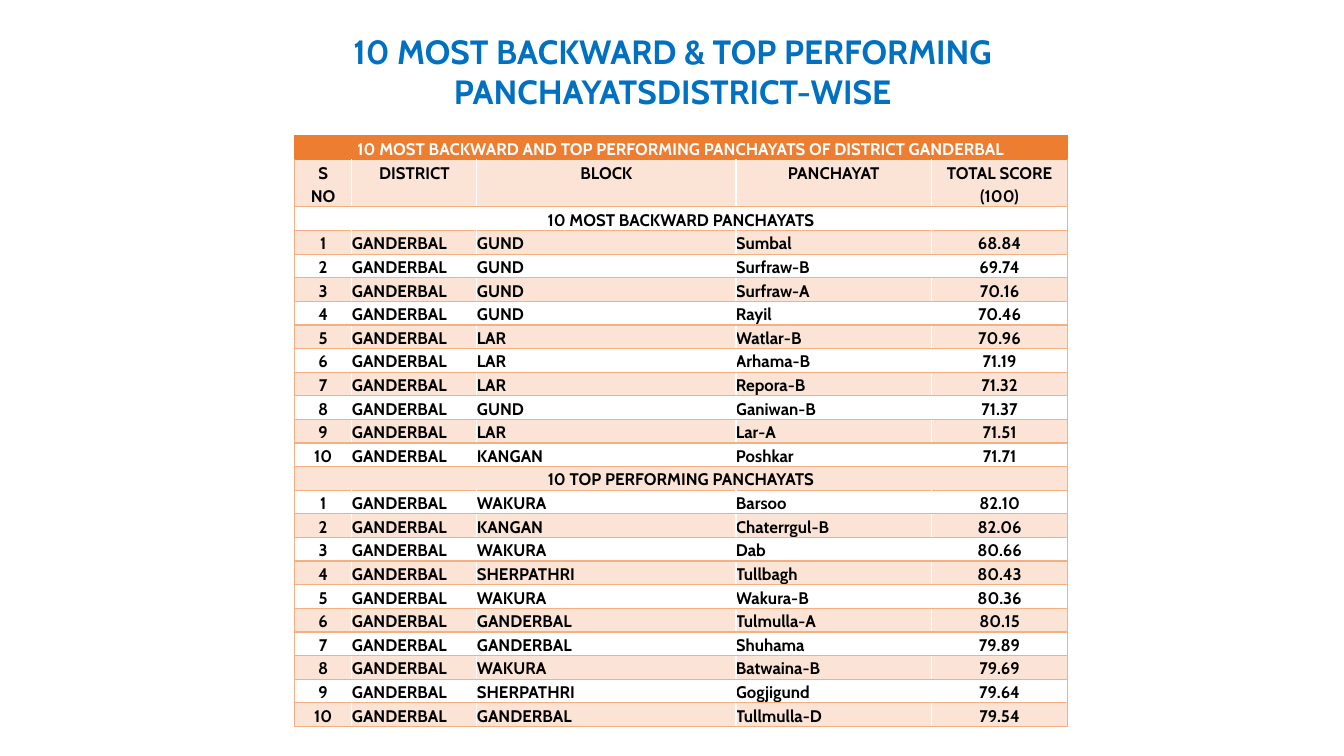
from lxml import etree
from pptx import Presentation
from pptx import util as u
from pptx.dml import color
from pptx.enum import text
from pptx.oxml import ns

FONT = "Cabin"
HUES = {
    "title": "0070C0",
    "head": "ED7D31",
    "band": "FBE4D5",
    "line": "F4B083",
    "white": "FFFFFF",
    "black": "000000",
}
TITLE = "10 MOST BACKWARD & TOP PERFORMING PANCHAYATSDISTRICT-WISE"
BANNER = "10 MOST BACKWARD AND TOP PERFORMING PANCHAYATS OF DISTRICT GANDERBAL"
HEADS = ["S\nNO", "DISTRICT", "BLOCK", "PANCHAYAT", "TOTAL SCORE\n(100)"]
GROUPS = {
    "10 MOST BACKWARD PANCHAYATS": [
        ("GUND", "Sumbal", "68.84"),
        ("GUND", "Surfraw-B", "69.74"),
        ("GUND", "Surfraw-A", "70.16"),
        ("GUND", "Rayil", "70.46"),
        ("LAR", "Watlar-B", "70.96"),
        ("LAR", "Arhama-B", "71.19"),
        ("LAR", "Repora-B", "71.32"),
        ("GUND", "Ganiwan-B", "71.37"),
        ("LAR", "Lar-A", "71.51"),
        ("KANGAN", "Poshkar", "71.71"),
    ],
    "10 TOP PERFORMING PANCHAYATS": [
        ("WAKURA", "Barsoo", "82.10"),
        ("KANGAN", "Chaterrgul-B", "82.06"),
        ("WAKURA", "Dab", "80.66"),
        ("SHERPATHRI", "Tullbagh", "80.43"),
        ("WAKURA", "Wakura-B", "80.36"),
        ("GANDERBAL", "Tulmulla-A", "80.15"),
        ("GANDERBAL", "Shuhama", "79.89"),
        ("WAKURA", "Batwaina-B", "79.69"),
        ("SHERPATHRI", "Gogjigund", "79.64"),
        ("GANDERBAL", "Tullmulla-D", "79.54"),
    ],
}
WIDTHS = [0.57, 1.24, 2.57, 1.94, 1.35]


def style(par, size, hue, align):
    par.alignment = align
    for run in par.runs:
        font = run.font
        font.name, font.size, font.bold = FONT, u.Pt(size), True
        font.color.rgb = color.RGBColor.from_string(HUES[hue])


def add_title(slide, box):
    title = slide.shapes.title
    title.left, title.top, title.width, title.height = map(u.Inches, box)
    frame = title.text_frame
    frame.text = TITLE
    frame.word_wrap = True
    frame.auto_size = text.MSO_AUTO_SIZE.NONE
    frame.vertical_anchor = text.MSO_ANCHOR.MIDDLE
    frame.margin_left = frame.margin_right = u.Inches(0.05)
    frame.margin_top = frame.margin_bottom = u.Inches(0.05)
    style(frame.paragraphs[0], 24, "title", text.PP_ALIGN.CENTER)


def add_edge(cell, side, hue):
    props = cell._tc.get_or_add_tcPr()
    line = etree.SubElement(props, ns.qn("a:ln" + side), w=str(u.Pt(1)))
    fill = etree.SubElement(line, ns.qn("a:solidFill"))
    etree.SubElement(fill, ns.qn("a:srgbClr"), val=HUES[hue])


def fill_cell(cell, words, fill, ink, align, edges):
    for side, hue in edges.items():
        add_edge(cell, side, hue)
    if fill:
        cell.fill.solid()
        cell.fill.fore_color.rgb = color.RGBColor.from_string(HUES[fill])
    else:
        cell.fill.background()
    cell.margin_left = cell.margin_right = u.Inches(0)
    cell.margin_top = cell.margin_bottom = u.Inches(0)
    cell.text_frame.text = words
    for par in cell.text_frame.paragraphs:
        par.line_spacing = 1.15
        style(par, 12, ink, align)


def list_rows():
    rows = [[BANNER], HEADS]
    for name, group in GROUPS.items():
        rows.append([name])
        for rank, (block, place, score) in enumerate(group, 1):
            rows.append([str(rank), "GANDERBAL", block, place, score])
    return rows


def add_scores(slide, box):
    rows = list_rows()
    last = len(WIDTHS) - 1
    table = slide.shapes.add_table(len(rows), len(WIDTHS), *map(u.Inches, box)).table
    for col, width in zip(table.columns, WIDTHS):
        col.width = u.Inches(width)
    for r, row in enumerate(rows):
        table.rows[r].height = u.Inches(0.44 if row is HEADS else 0.21)
        wide = len(row) == 1
        if wide:
            table.cell(r, 0).merge(table.cell(r, last))
        fill = "head" if r == 0 else "band" if r % 2 else None
        ink = "black" if r else "white"
        rule = "line" if r else "head"
        for c in range(len(WIDTHS)):
            inner = rule if wide else "white"
            edges = {
                "L": inner if c else rule,
                "R": inner if c < last else rule,
                "T": "line" if r > 1 else "head",
                "B": rule,
            }
            centred = row is HEADS or c in (0, last)
            align = text.PP_ALIGN.CENTER if centred else text.PP_ALIGN.LEFT
            words = row[c] if c < len(row) else ""
            fill_cell(table.cell(r, c), words, fill, ink, align, edges)


def main():
    deck = Presentation()
    deck.slide_width, deck.slide_height = u.Inches(13.33), u.Inches(7.5)
    slide = deck.slides.add_slide(deck.slide_layouts[5])
    add_title(slide, (2.22, 0.25, 8.9, 0.91))
    add_scores(slide, (2.92, 1.35, sum(WIDTHS), 5.27))
    deck.save("out.pptx")


if __name__ == "__main__":
    main()
